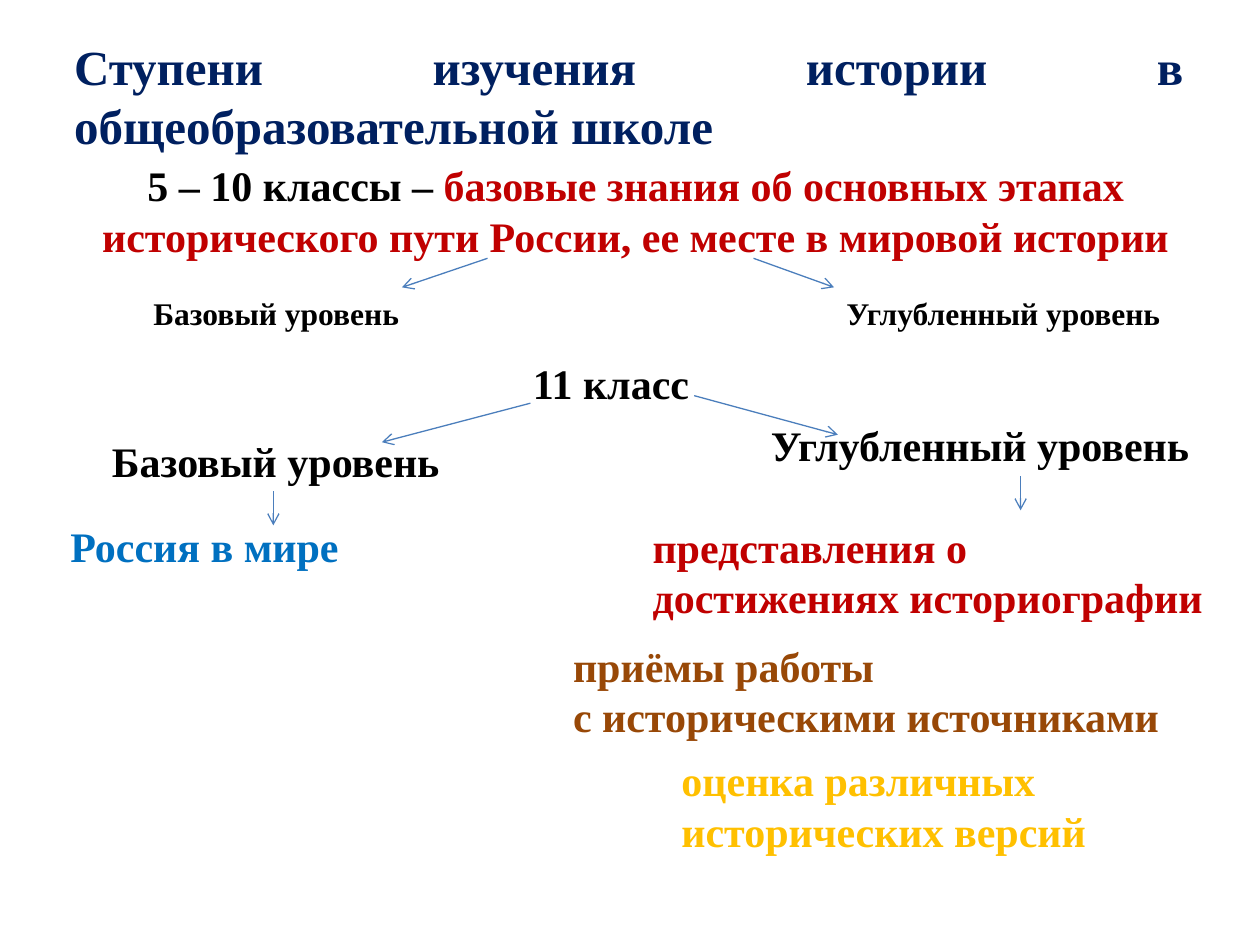
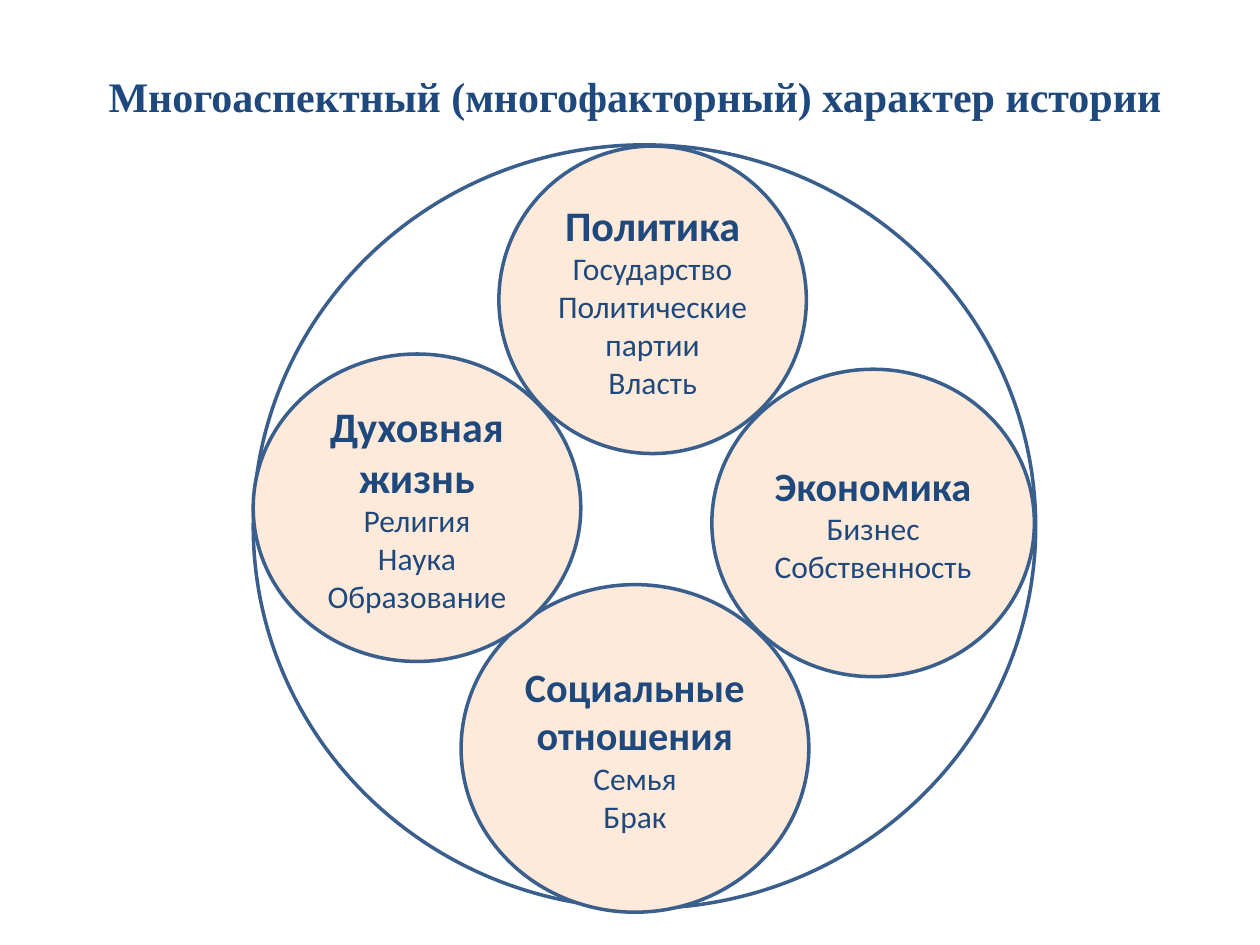
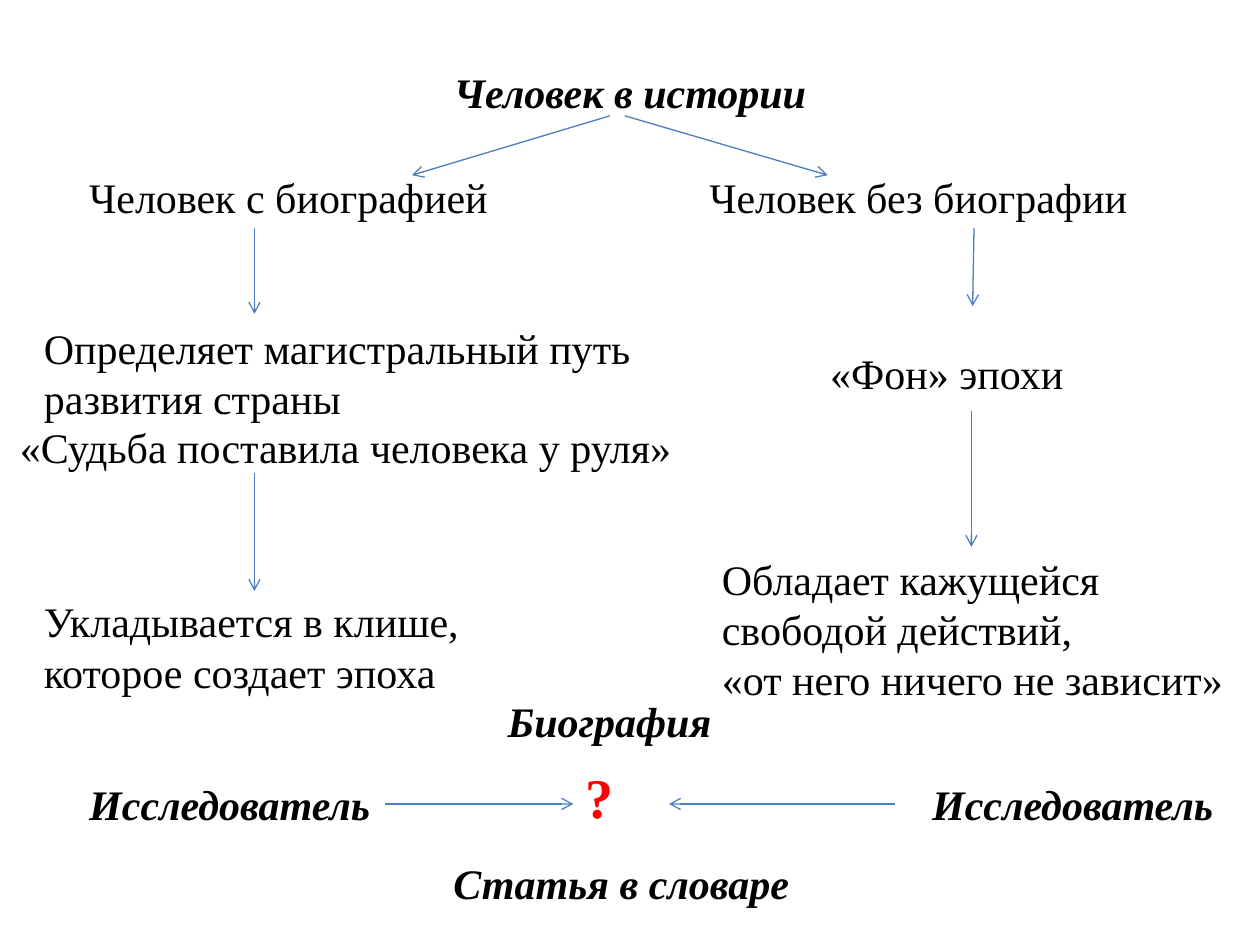
from pptx import Presentation
from pptx.dml.color import RGBColor
from pptx.enum.shapes import MSO_CONNECTOR, MSO_SHAPE
from pptx.enum.text import MSO_ANCHOR, PP_ALIGN
from pptx.oxml import parse_xml
from pptx.oxml.ns import nsdecls
from pptx.util import Pt

BLACK, NAVY, BLUE, RED = "000000", "002060", "1F497D", "C00000"
ARROW, RING, PEACH, WHITE = "4B7EBC", "3A5F8C", "FDEADA", "FFFFFF"
SERIF, SANS = "Times New Roman", "Calibri"


def rgb(value):
    return RGBColor.from_string(value)


class Deck:
    """Holds the presentation, its style and the current slide."""

    def __init__(self):
        self.prs = Presentation()
        self.prs.slide_width, self.prs.slide_height = Pt(720), Pt(540)

    def slide(self):
        self.s = self.prs.slides.add_slide(self.prs.slide_layouts[6])

    def style(self, r, size=24, color=BLACK, bold=False, italic=False, font=SERIF):
        f = r.font
        f.name, f.size, f.bold, f.italic = font, Pt(size), bold, italic
        f.color.rgb = rgb(color)

    def text(self, x, y, w, text, size=24, h=None, wrap=False,
             align=PP_ALIGN.LEFT, **look):
        lines = text.split("\n")
        h = h or len(lines) * size * 1.2 + 7.2
        tf = self.s.shapes.add_textbox(Pt(x), Pt(y), Pt(w), Pt(h)).text_frame
        tf.word_wrap = wrap
        tf.text = text
        for p in tf.paragraphs:
            p.alignment = align
            self.style(p.runs[0], size, **look)
        return tf

    def title(self, x, y, h, text, size=24, align=PP_ALIGN.CENTER, **look):
        tf = self.text(x, y, 648, text, size, h, True, align, bold=True, **look)
        tf.vertical_anchor = MSO_ANCHOR.MIDDLE

    def arrow(self, x1, y1, x2, y2):
        c = self.s.shapes.add_connector(
            MSO_CONNECTOR.STRAIGHT, Pt(x1), Pt(y1), Pt(x2), Pt(y2))
        c.line.color.rgb = rgb(ARROW)
        c.line.width = Pt(0.75)
        c.line._get_or_add_ln().append(
            parse_xml(f'<a:tailEnd {nsdecls("a")} type="arrow"/>'))
        c._element.spPr.append(parse_xml(f'<a:effectLst {nsdecls("a")}/>'))

    def circle(self, x, y, w, h, fill=PEACH, head="", items=(), size=24):
        sp = self.s.shapes.add_shape(MSO_SHAPE.OVAL, Pt(x), Pt(y), Pt(w), Pt(h))
        sp.shadow.inherit = False
        sp.fill.solid()
        sp.fill.fore_color.rgb = rgb(fill)
        sp.line.color.rgb = rgb(RING)
        sp.line.width = Pt(2)
        if not head:
            return
        tf = sp.text_frame
        tf.word_wrap = True
        tf.vertical_anchor = MSO_ANCHOR.MIDDLE
        tf.text = "\n".join([head, *items])
        for i, p in enumerate(tf.paragraphs):
            p.alignment = PP_ALIGN.CENTER
            self.style(p.runs[0], 18 if i else size, BLUE, i == 0, font=SANS)


def stages(d):
    d.slide()
    d.title(35.3, 15.1, 78.5, "Ступени изучения истории в общеобразовательной школе",
            28, PP_ALIGN.JUSTIFY, color=NAVY)
    for x, y, w, text, color in [
        (297.4, 200.9, 104.4, "11 класс", BLACK),
        (56.9, 245.5, 203.8, "Базовый уровень", BLACK),
        (33.1, 293.8, 169.2, "Россия в мире", "0070C0"),
        (433.4, 236.2, 256.3, "Углубленный уровень", BLACK),
        (365.8, 294.5, 331.9, "представления о\nдостижениях историографии", RED),
        (320.4, 362.2, 352.8, "приёмы работы\nс историческими источниками", "984807"),
        (382.3, 427.7, 248.4, "оценка различных\nисторических версий", "FFC000"),
    ]:
        d.text(x, y, w, text, color=color, bold=True)
    tf = d.text(35.3, 87.8, 655.9, "5 – 10 классы – ", h=65.5, wrap=True,
                align=PP_ALIGN.CENTER, bold=True)
    r = tf.paragraphs[0].add_run()
    r.text = "базовые знания об основных этапах исторического пути России, ее месте в мировой истории"
    d.style(r, color=RED, bold=True)
    d.text(80.6, 164.2, 156.2, "Базовый уровень", 18, bold=True)
    d.text(476.6, 164.2, 195.8, "Углубленный уровень", 18, bold=True)
    for ends in [
        (303.1, 230.4, 218.2, 252.7), (396.7, 226.1, 478.8, 248.4),
        (156.2, 280.8, 156.2, 300.2), (583.2, 272.2, 583.2, 291.6),
        (278.6, 147.6, 229.7, 164.2), (430.6, 147.6, 476.6, 164.2),
    ]:
        d.arrow(*ends)


def aspects(d):
    d.slide()
    d.title(38.9, 9.4, 90, "Многоаспектный (многофакторный) характер истории", color=BLUE)
    d.circle(144.7, 82.8, 447.1, 436.3, WHITE)
    for x, y, w, h, size, head, items in [
        (406.8, 211, 184.3, 175.7, 23, "Экономика", ["Бизнес", "Собственность"]),
        (263.5, 334.1, 198.7, 187.2, 23, "Социальные отношения", ["Семья", "Брак"]),
        (285.1, 83.5, 175.7, 175.7, 24, "Политика",
         ["Государство", "Политические партии", "Власть"]),
        (144.7, 202.3, 187.2, 175.7, 24, "Духовная жизнь",
         ["Религия", "Наука", "Образование"]),
    ]:
        d.circle(x, y, w, h, head=head, items=items, size=size)


def person(d):
    d.slide()
    d.title(36, 21.6, 61.2, "Человек в истории", italic=True)
    for x, y, w, text in [
        (43.9, 94.3, 244.8, "Человек с биографией"),
        (398.2, 94.3, 255.6, "Человек без биографии"),
        (18, 337, 259.9, "Укладывается в клише,\nкоторое создает эпоха"),
        (405.4, 312.5, 301.7,
         "Обладает кажущейся\nсвободой действий,\n«от него ничего не зависит»"),
        (4.3, 237.6, 388.8, "«Судьба поставила человека у руля»"),
        (467.3, 195.1, 149, "«Фон» эпохи"),
        (18, 180.7, 359.3, "Определяет магистральный путь\nразвития страны"),
    ]:
        d.text(x, y, w, text)
    for x, y, w, text in [
        (283, 393.8, 137.5, "Биография"),
        (252, 486.7, 208.1, "Статья в словаре"),
        (43.9, 441.4, 176.4, "Исследователь"),
        (525.6, 441.4, 176.4, "Исследователь"),
    ]:
        d.text(x, y, w, text, bold=True, italic=True)
    d.text(327.6, 432, 31, "?", 32, color="FF0000", bold=True)
    for ends in [
        (348.5, 66.2, 235.4, 100.1), (357.1, 66.2, 473, 100.1),
        (145.4, 130.3, 145.4, 179.3), (556.6, 130.3, 555.8, 175),
        (145.4, 270, 145.4, 337.7), (555.1, 234.7, 555.1, 312.5),
        (511.2, 459.4, 382.3, 459.4), (220.3, 459.4, 327.6, 459.4),
    ]:
        d.arrow(*ends)


def main():
    d = Deck()
    for build in (stages, aspects, person):
        build(d)
    d.prs.save("out.pptx")


if __name__ == "__main__":
    main()
